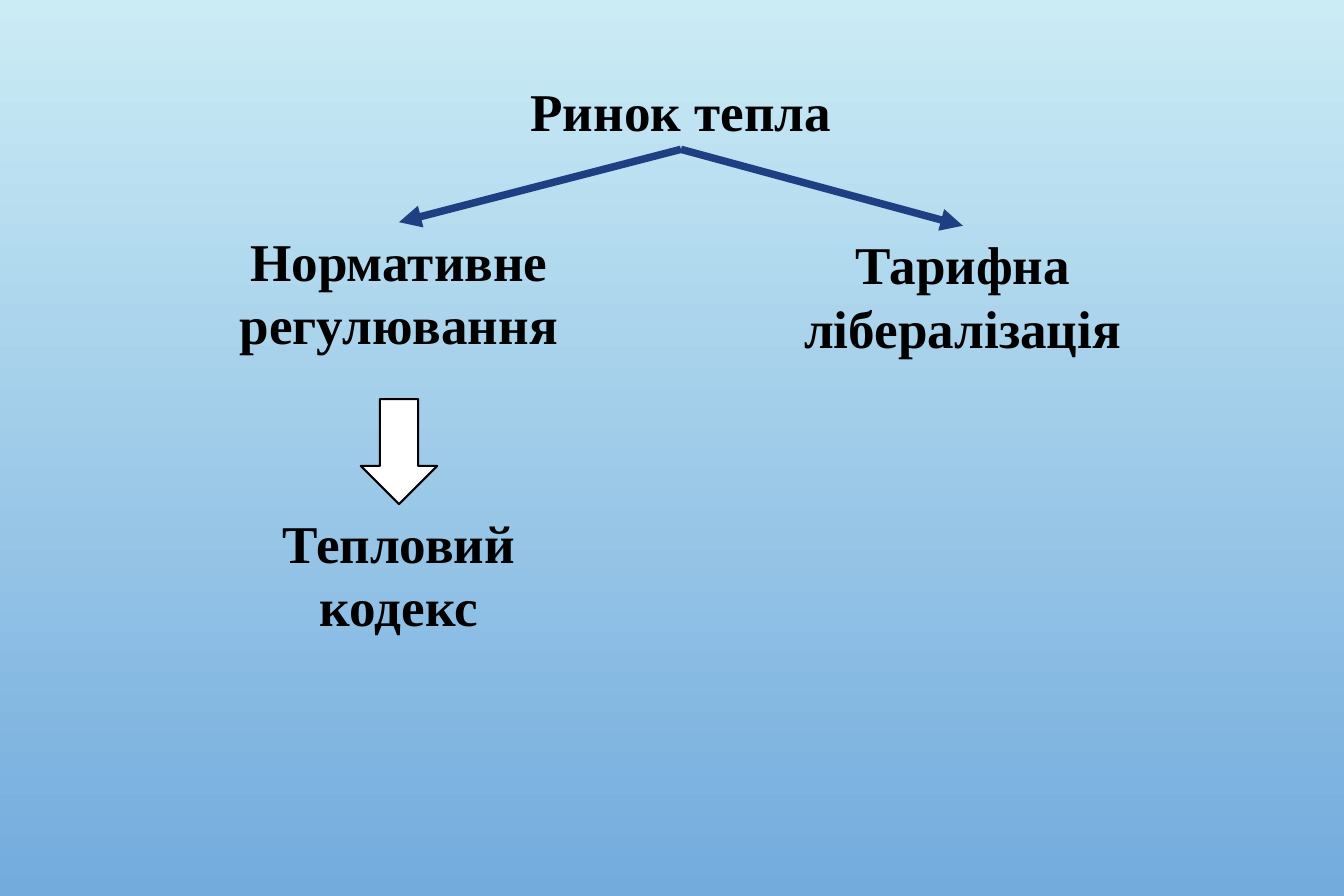
"""Build the heat market slide: a title branching into two topics, one leading to a code."""
from lxml import etree
from pptx import Presentation
from pptx.dml.color import RGBColor
from pptx.enum.shapes import MSO_CONNECTOR, MSO_SHAPE
from pptx.enum.text import MSO_AUTO_SIZE, PP_ALIGN
from pptx.oxml.ns import qn
from pptx.util import Inches, Pt

LABELS = {
    "market": ("Ринок тепла", 1.92, 0.61, 7.56, 0.64),
    "rules": ("Нормативне регулювання", 1.61, 1.86, 3.46, 1.18),
    "code": ("Тепловий кодекс", 1.61, 4.22, 3.46, 1.18),
    "tariff": ("Тарифна\vлібералізація", 6.33, 1.89, 3.46, 1.18),
}
LINKS = [("market", "rules"), ("market", "tariff")]
DROP = ("rules", "code")
DROP_WIDTH, DROP_HEIGHT = Inches(0.64), Inches(0.88)

THEME = {
    "sky": [RGBColor.from_string("CBECF5"), RGBColor.from_string("73ABDD")],
    "link": RGBColor.from_string("1F3F83"),
    "ink": RGBColor.from_string("000000"),
    "paper": RGBColor.from_string("FFFFFF"),
    "link_width": Pt(4.5),
    "edge_width": Pt(1.25),
    "font": {"name": "Times New Roman", "size": Pt(32), "bold": True},
}


def paint(slide):
    fill = slide.background.fill
    fill.gradient()
    fill.gradient_angle = 270
    for place, (stop, color) in enumerate(zip(fill.gradient_stops, THEME["sky"])):
        stop.position = place
        stop.color.rgb = color


def label(slide, text, *place):
    box = slide.shapes.add_textbox(*map(Inches, place))
    frame = box.text_frame
    frame.word_wrap = True
    frame.auto_size = MSO_AUTO_SIZE.SHAPE_TO_FIT_TEXT
    line = frame.paragraphs[0]
    line.text = text
    line.alignment = PP_ALIGN.CENTER
    for run in line.runs:
        for key, value in THEME["font"].items():
            setattr(run.font, key, value)
        run.font.color.rgb = THEME["ink"]
    return box


def link(slide, start, end):
    arrow = slide.shapes.add_connector(MSO_CONNECTOR.STRAIGHT, 0, 0, 0, 0)
    arrow.begin_connect(start, 2)
    arrow.end_connect(end, 0)
    arrow.line.color.rgb = THEME["link"]
    arrow.line.width = THEME["link_width"]
    etree.SubElement(arrow.line._get_or_add_ln(), qn("a:tailEnd"), type="triangle")
    etree.SubElement(arrow._element.spPr, qn("a:effectLst"))


def drop(slide, start, end):
    left = start.left + (start.width - DROP_WIDTH) // 2
    arrow = slide.shapes.add_shape(
        MSO_SHAPE.DOWN_ARROW, left, end.top - DROP_HEIGHT, DROP_WIDTH, DROP_HEIGHT)
    arrow.shadow.inherit = False
    arrow.fill.solid()
    arrow.fill.fore_color.rgb = THEME["paper"]
    arrow.line.color.rgb = THEME["ink"]
    arrow.line.width = THEME["edge_width"]


def main():
    deck = Presentation()
    deck.slide_width, deck.slide_height = Inches(11.25), Inches(7.5)
    slide = deck.slides.add_slide(deck.slide_layouts[6])
    paint(slide)
    boxes = {name: label(slide, *item) for name, item in LABELS.items()}
    for start, end in LINKS:
        link(slide, boxes[start], boxes[end])
    drop(slide, *(boxes[name] for name in DROP))
    deck.save("out.pptx")


if __name__ == "__main__":
    main()
